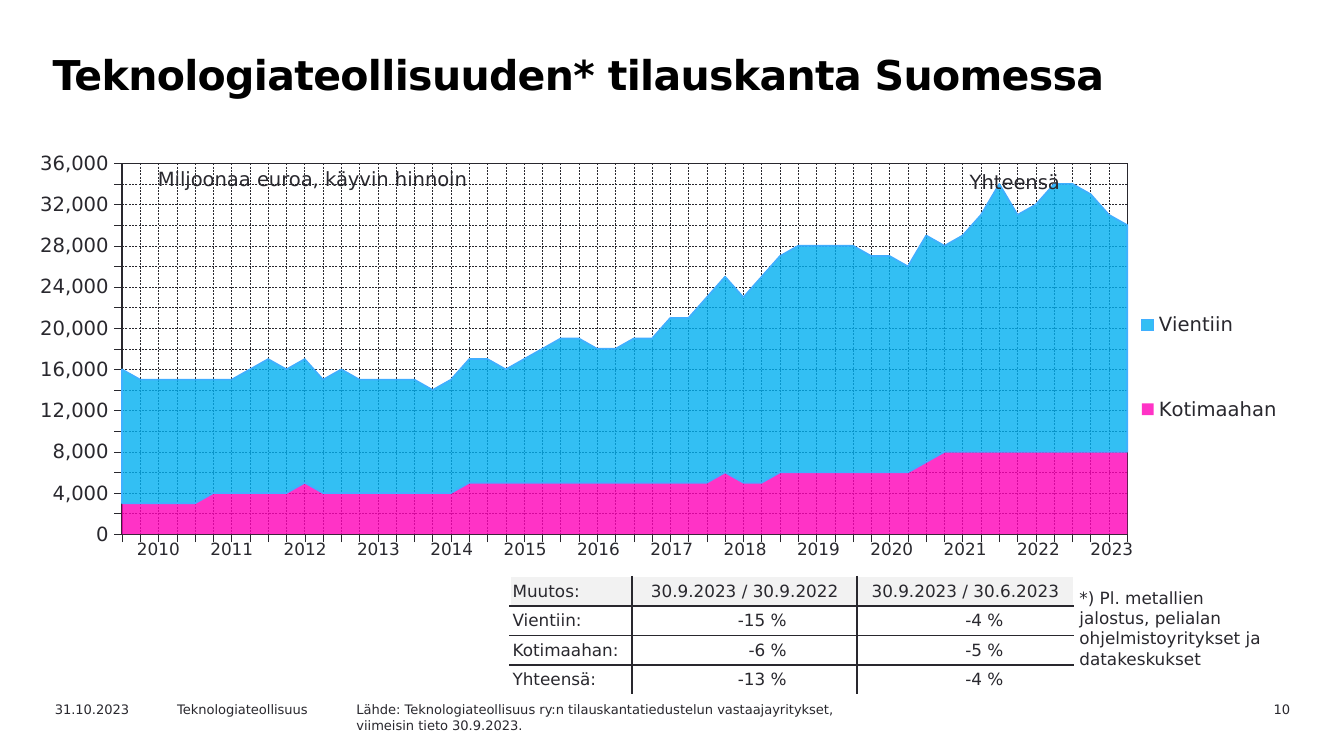
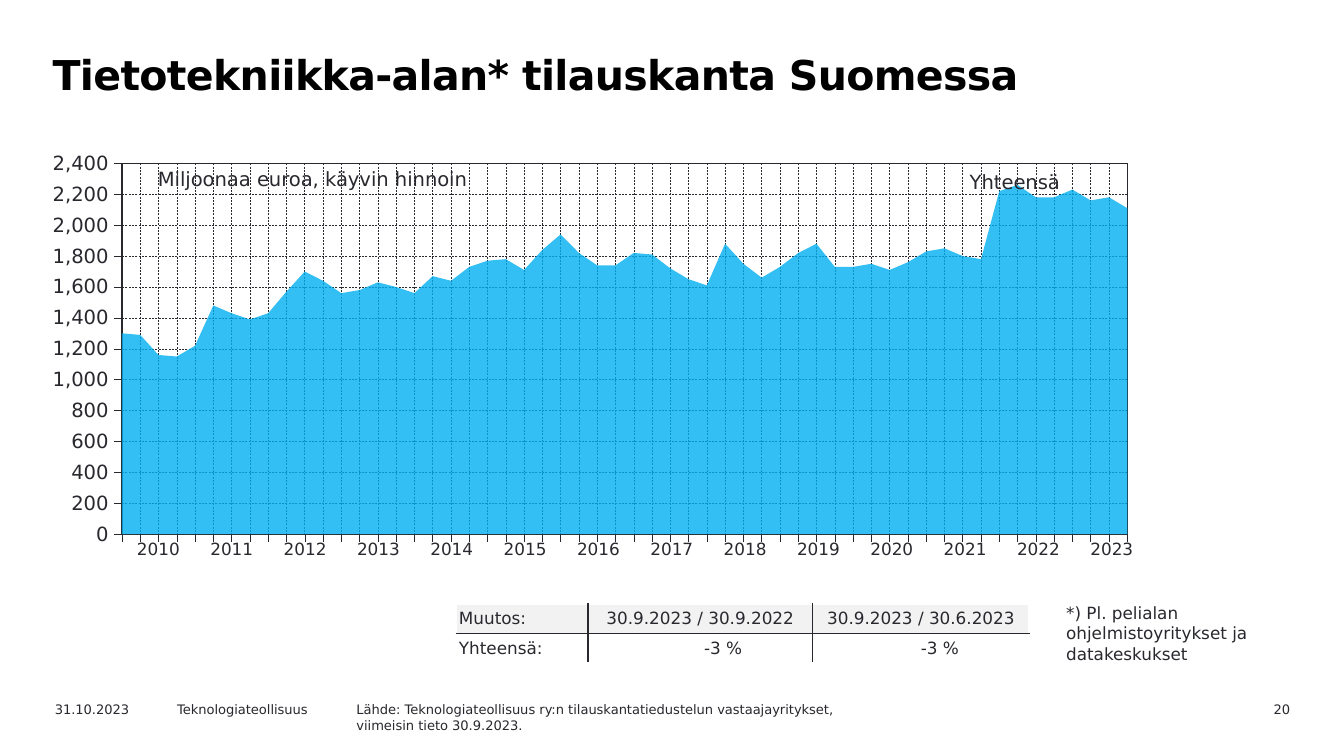
from dataclasses import dataclass

from lxml.etree import SubElement
from pptx import Presentation
from pptx.chart.data import CategoryChartData
from pptx.dml.color import RGBColor
from pptx.enum.chart import (XL_CHART_TYPE as ChartType, XL_LEGEND_POSITION as LegendPosition,
                             XL_TICK_LABEL_POSITION as LabelPosition, XL_TICK_MARK as TickMark)
from pptx.enum.dml import MSO_LINE
from pptx.enum.text import MSO_ANCHOR as Anchor, PP_ALIGN as Align
from pptx.oxml import parse_xml
from pptx.oxml.ns import nsdecls, qn
from pptx.util import Pt


@dataclass(frozen=True)
class Theme:
    font: str = "DejaVu Sans"
    chart_font: str = "Arial"
    ink: str = "29282E"
    black: str = "000000"
    white: str = "FFFFFF"
    header: str = "F2F2F2"
    export: str = "00B0F0"
    export_line: str = "40AFFF"
    domestic: str = "FF00B8"
    title_size: float = 22
    chart_size: float = 10.5
    axis_size: float = 18.2
    body_size: float = 9
    footer_size: float = 7


@dataclass(frozen=True)
class Box:
    left: float
    top: float
    width: float
    height: float

    def inner(self, left, top, width, height):
        return Box(self.left + left, self.top + top, width, height)

    def lengths(self):
        return [Pt(value) for value in (self.left, self.top, self.width, self.height)]


THEME = Theme()
PAGE = Box(0, 0, 720, 405)
CHART_BOX = PAGE.inner(14.4, 79.9, 697.7, 224.6)
PLOT_SHARE = (0.073, 0.034, 0.772, 0.885)
LEGEND_SHARE = (0.833, 0.245, 0.15, 0.55)
NO_STYLE = "{2D5ABB26-0587-4C30-8999-92F81FD0307C}"
SOURCE = ("Lähde: Teknologiateollisuus ry:n tilauskantatiedustelun vastaajayritykset,\n"
          "viimeisin tieto 30.9.2023.")
CHANGE_HEADER = ("Muutos:", "30.9.2023 / 30.9.2022", "30.9.2023 / 30.6.2023")

# Order book by quarter, millions of euros, rounded to thousands or tens
DOMESTIC = [1000 * value for value in (
    3, 3, 3, 3, 3, 4, 4, 4, 4, 4, 5, 4, 4, 4, 4, 4, 4, 4, 4, 5, 5, 5, 5, 5, 5, 5, 5, 5,
    5, 5, 5, 5, 5, 6, 5, 5, 6, 6, 6, 6, 6, 6, 6, 6, 7, 8, 8, 8, 8, 8, 8, 8, 8, 8, 8, 8)]
EXPORT = [1000 * value for value in (
    13, 12, 12, 12, 12, 11, 11, 12, 13, 12, 12, 11, 12, 11, 11, 11, 11, 10, 11,
    12, 12, 11, 12, 13, 14, 14, 13, 13, 14, 14, 16, 16, 18, 19, 18, 20, 21, 22,
    22, 22, 22, 21, 21, 20, 22, 20, 21, 23, 26, 23, 24, 26, 26, 25, 23, 22)]
IT_TOTAL = [10 * value for value in (
    130, 129, 116, 115, 122, 148, 143, 139, 143, 157, 170, 164, 156, 158,
    163, 160, 156, 167, 164, 173, 177, 178, 171, 184, 194, 182, 174, 174,
    182, 181, 172, 165, 161, 188, 175, 166, 173, 182, 188, 173, 173, 175,
    171, 176, 183, 185, 180, 178, 222, 226, 218, 218, 223, 216, 218, 211)]


def color(value):
    return RGBColor.from_string(value)


# Text
def set_font(font, size, name=THEME.font, ink=THEME.ink, bold=False):
    font.name, font.size, font.bold = name, Pt(size), bold
    font.color.rgb = color(ink)


def write(frame, text, size=THEME.body_size, ink=THEME.ink, bold=False, align=Align.LEFT,
          line_spacing=None, tracking=None):
    for index, line in enumerate(text.split("\n")):
        paragraph = frame.add_paragraph() if index else frame.paragraphs[0]
        paragraph.alignment = align
        paragraph.space_before = Pt(0)
        if line_spacing:
            paragraph.line_spacing = Pt(line_spacing)
        run = paragraph.add_run()
        run.text = line
        set_font(run.font, size, ink=ink, bold=bold)
        if tracking:
            run.font._element.set("spc", str(round(tracking * 100)))


def set_margins(target, left, top, right, bottom):
    target.margin_left, target.margin_top = Pt(left), Pt(top)
    target.margin_right, target.margin_bottom = Pt(right), Pt(bottom)


def add_text(slide, box, text, margins=(7.2, 3.6, 7.2, 3.6), **text_format):
    frame = slide.shapes.add_textbox(*box.lengths()).text_frame
    frame.word_wrap = True
    set_margins(frame, *margins)
    write(frame, text, **text_format)


# Title and footer
def place_title(slide, box, text):
    title = slide.shapes.title
    title.left, title.top, title.width, title.height = box.lengths()
    frame = title.text_frame
    frame.word_wrap = True
    frame.vertical_anchor = Anchor.TOP
    set_margins(frame, 8, 3.6, 7.2, 3.6)
    write(frame, text, size=THEME.title_size, ink=THEME.black, bold=True,
          line_spacing=27, tracking=-0.34)


def add_footer(slide, box, number):
    parts = ((22.3, 72, 13, "31.10.2023", Align.LEFT),
             (87.8, 102.2, 13, "Teknologiateollisuus", Align.LEFT),
             (183.9, 360, 18.7, SOURCE, Align.LEFT),
             (630.5, 67.7, 13, number, Align.RIGHT))
    for left, width, height, text, align in parts:
        add_text(slide, box.inner(left, 0, width, height), text,
                 size=THEME.footer_size, align=align)


# Chart
def set_layout(parent, index, share, inner=False):
    for old in parent.findall(qn("c:layout")):
        parent.remove(old)
    target = '<c:layoutTarget val="inner"/>' if inner else ""
    modes = "".join(f'<c:{side}Mode val="edge"/>' for side in "xy")
    sizes = "".join(f'<c:{side} val="{value}"/>' for side, value in zip("xywh", share))
    parent.insert(index, parse_xml(
        f'<c:layout {nsdecls("c")}><c:manualLayout>{target}{modes}{sizes}'
        '</c:manualLayout></c:layout>'))


def style_axis(axis):
    axis.major_tick_mark, axis.minor_tick_mark = TickMark.OUTSIDE, TickMark.NONE
    axis.has_major_gridlines = True
    grid = axis.major_gridlines.format.line
    for line, width in ((axis.format.line, 0.22), (grid, 0.25)):
        line.color.rgb = color(THEME.ink)
        line.width = Pt(width)
    grid.dash_style = MSO_LINE.DASH


def add_area_chart(slide, box, series_list, maximum, step, has_legend):
    data = CategoryChartData()
    data.categories = [str(quarter + 1) for quarter in range(len(series_list[0][1]))]
    for name, values, _, _ in series_list:
        data.add_series(name, values)
    chart = slide.shapes.add_chart(ChartType.AREA_STACKED, *box.lengths(), data).chart
    chart.has_title = False
    set_font(chart.font, THEME.axis_size, name=THEME.chart_font, bold=True)

    # Plot frame
    plot_area = chart._chartSpace.chart.plotArea
    set_layout(plot_area, 0, PLOT_SHARE, inner=True)
    plot_area.append(parse_xml(
        f'<c:spPr {nsdecls("c", "a")}><a:noFill/><a:ln w="{Pt(0.75)}"><a:solidFill>'
        f'<a:srgbClr val="{THEME.ink}"/></a:solidFill></a:ln></c:spPr>'))

    # Axes
    style_axis(chart.category_axis)
    chart.category_axis.tick_label_position = LabelPosition.NONE
    value_axis = chart.value_axis
    style_axis(value_axis)
    value_axis.minimum_scale, value_axis.maximum_scale = 0, maximum
    value_axis.major_unit = step
    value_axis.tick_labels.number_format = "#,##0"
    value_axis.tick_labels.number_format_is_linked = False
    set_font(value_axis.tick_labels.font, THEME.chart_size)
    value_axis._element.find(qn("c:crossBetween")).set("val", "midCat")

    # Translucent areas
    chart.plots[0].vary_by_categories = False
    for series, (_, _, fill, outline) in zip(chart.plots[0].series, series_list):
        series.format.fill.solid()
        series.format.fill.fore_color.rgb = color(fill)
        tint = series._element.xpath("c:spPr/a:solidFill/a:srgbClr")[0]
        SubElement(tint, qn("a:alpha")).set("val", "80000")
        if outline:
            series.format.line.color.rgb = color(outline)
            series.format.line.width = Pt(0.88)
        else:
            series.format.line.fill.background()

    # Legend
    chart.has_legend = has_legend
    if has_legend:
        chart.legend.position = LegendPosition.RIGHT
        chart.legend.include_in_layout = False
        set_layout(chart.legend._element, 1, LEGEND_SHARE)
        set_font(chart.legend.font, THEME.chart_size)


def add_chart_labels(slide, box):
    add_text(slide, box.inner(63.7, 6, 187.2, 19.4), "Miljoonaa euroa, käyvin hinnoin",
             margins=(6.5, 3.6, 6.5, 3.6), size=THEME.chart_size)
    add_text(slide, box.inner(498.6, 8.4, 76.3, 19.4), "Yhteensä",
             margins=(6.5, 2.9, 6.5, 2.9), size=THEME.chart_size)


# Tables
def add_plain_table(slide, box, widths, row_count):
    table = slide.shapes.add_table(row_count, len(widths), *box.lengths()).table
    table.first_row = table.horz_banding = False
    table._tbl.tblPr.find(qn("a:tableStyleId")).text = NO_STYLE
    for column, width in zip(table.columns, widths):
        column.width = Pt(width)
    for row in table.rows:
        row.height = Pt(box.height / row_count)
    return table


def set_borders(cell, sides):
    properties = cell._tc.get_or_add_tcPr()
    for index, side in enumerate("LRTB"):
        ink = THEME.ink if side in sides else THEME.white
        properties.insert(index, parse_xml(
            f'<a:ln{side} {nsdecls("a")} w="{Pt(1)}"><a:solidFill>'
            f'<a:srgbClr val="{ink}"/></a:solidFill></a:ln{side}>'))


def add_year_table(slide, box):
    years = range(2010, 2024)
    table = add_plain_table(slide, box, [box.width / len(years)] * len(years), 1)
    for cell, year in zip(table.rows[0].cells, years):
        cell.fill.background()
        set_margins(cell, 7.2, 3.6, 7.2, 3.6)
        write(cell.text_frame, str(year), align=Align.CENTER)


def add_change_table(slide, left, top, label_width, changes):
    rows = (CHANGE_HEADER, *changes)
    widths = (label_width, 120.4, 116.1)
    box = Box(left, top, sum(widths), 15.84 * len(rows))
    table = add_plain_table(slide, box, widths, len(rows))
    for r, row in enumerate(rows):
        for c, text in enumerate(row):
            cell = table.cell(r, c)
            is_value = r > 0 and c > 0
            cell.fill.solid()
            cell.fill.fore_color.rgb = color(THEME.white if r else THEME.header)
            cell.vertical_anchor = Anchor.MIDDLE
            set_margins(cell, 1.4, 1.4, 37.7 if is_value else 1.4, 1.4)
            align = Align.RIGHT if is_value else Align.CENTER if c else Align.LEFT
            write(cell.text_frame, text, align=align)
            inside = (("L", c > 0), ("R", c < len(row) - 1),
                      ("T", r > 0), ("B", r < len(rows) - 1))
            set_borders(cell, [side for side, drawn in inside if drawn])


# Slide type
def add_order_book_slide(presentation, title, number, chart, table, note_box, note):
    slide = presentation.slides.add_slide(presentation.slide_layouts[5])
    place_title(slide, PAGE.inner(20.2, 22.3, 629.3, 51.1), title)
    add_footer(slide, PAGE.inner(0, 372.2, 720, 18.7), number)
    add_area_chart(slide, CHART_BOX, **chart)
    add_chart_labels(slide, CHART_BOX)
    add_change_table(slide, **table)
    add_text(slide, note_box, note)
    add_year_table(slide, CHART_BOX.inner(50.8, 205.6, 550.1, 22.3))


def main():
    presentation = Presentation()
    presentation.slide_width, presentation.slide_height = Pt(PAGE.width), Pt(PAGE.height)
    add_order_book_slide(
        presentation, "Teknologiateollisuuden* tilauskanta Suomessa", "10",
        chart=dict(series_list=(("Kotimaahan", DOMESTIC, THEME.domestic, None),
                                ("Vientiin", EXPORT, THEME.export, THEME.export_line)),
                   maximum=36000, step=2000, has_legend=True),
        table=dict(left=273.2, top=308.9, label_width=65.5,
                   changes=(("Vientiin:", "-15 %", "-4 %"), ("Kotimaahan:", "-6 %", "-5 %"),
                            ("Yhteensä:", "-13 %", "-4 %"))),
        note_box=PAGE.inner(571.2, 311.3, 119.5, 51.1),
        note="*) Pl. metallien jalostus, pelialan ohjelmistoyritykset ja datakeskukset")
    add_order_book_slide(
        presentation, "Tietotekniikka-alan* tilauskanta Suomessa", "20",
        chart=dict(series_list=(("Series 1", IT_TOTAL, THEME.export, None),),
                   maximum=2400, step=200, has_legend=False),
        table=dict(left=244.5, top=323.6, label_width=70.4,
                   changes=(("Yhteensä:", "-3 %", "-3 %"),)),
        note_box=PAGE.inner(564.1, 319.4, 119.5, 40.3),
        note="*) Pl. pelialan ohjelmistoyritykset ja datakeskukset")
    presentation.save("out.pptx")


if __name__ == "__main__":
    main()
